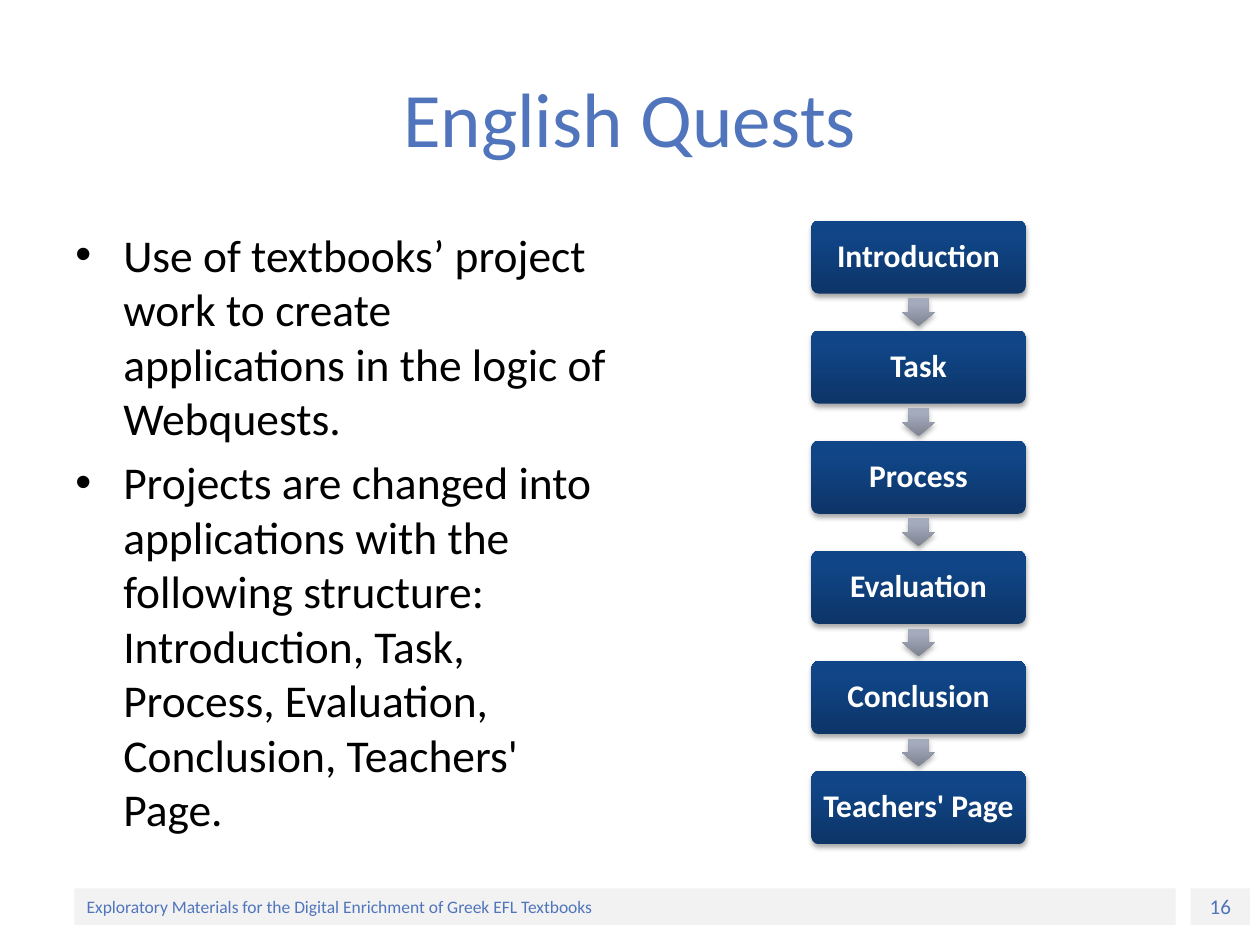
from lxml.etree import SubElement
from pptx import Presentation
from pptx.dml.color import RGBColor
from pptx.enum.shapes import MSO_SHAPE
from pptx.enum.text import MSO_ANCHOR, PP_ALIGN
from pptx.oxml import parse_xml
from pptx.oxml.ns import nsdecls, qn
from pptx.util import Inches, Pt

# Content
TITLE = "English Quests"
BULLETS = [
    "Use of textbooks’ project work to create applications in the logic of Webquests.",
    "Projects are changed into applications with the following structure: "
    "Introduction, Task, Process, Evaluation, Conclusion, Teachers' Page.",
]
STEPS = ["Introduction", "Task", "Process", "Evaluation", "Conclusion", "Teachers' Page"]
FOOTER = "Exploratory Materials for the Digital Enrichment of Greek EFL Textbooks"
PAGE_NUMBER = "16"

# Style
FONT = "Calibri"
BLUE = RGBColor(0x50, 0x75, 0xBC)
BLACK = RGBColor(0x00, 0x00, 0x00)
WHITE = RGBColor(0xFF, 0xFF, 0xFF)
PALE_GREY = RGBColor(0xF2, 0xF2, 0xF2)
# Gradient stops run from the bottom up: position in percent, colour
NAVY_STOPS = [(0, RGBColor(0x0D, 0x35, 0x68)), (80, RGBColor(0x10, 0x45, 0x87)),
              (100, RGBColor(0x0E, 0x45, 0x8A))]
GREY_STOPS = [(0, RGBColor(0x7E, 0x83, 0x91)), (80, RGBColor(0xA4, 0xAB, 0xBC)),
              (100, RGBColor(0xA4, 0xAB, 0xBE))]

# Flow geometry, in inches
FLOW_LEFT, FLOW_TOP, FLOW_BOTTOM = 6.44, 1.75, 6.70
STEP_WIDTH, STEP_HEIGHT = 1.70, 0.58
ARROW_LENGTH, ARROW_WIDTH = 0.22, 0.26


def format_text(paragraph, size, color, bold=False, align=PP_ALIGN.LEFT):
    paragraph.alignment = align
    for span in paragraph.runs:
        span.font.name = FONT
        span.font.size = Pt(size)
        span.font.bold = bold
        span.font.color.rgb = color


def set_insets(frame, horizontal, vertical):
    frame.margin_left = frame.margin_right = Inches(horizontal)
    frame.margin_top = frame.margin_bottom = Inches(vertical)


def add_plain_shape(slide, kind, left, top, width, height):
    shape = slide.shapes.add_shape(
        kind, Inches(left), Inches(top), Inches(width), Inches(height))
    shape.shadow.inherit = False
    shape.line.fill.background()
    return shape


def add_raised_shape(slide, kind, left, top, width, height, stops):
    """Add a shape with a vertical gradient and a soft shadow below it."""
    shape = add_plain_shape(slide, kind, left, top, width, height)
    stop_xml = "".join(
        f'<a:gs pos="{position * 1000}"><a:srgbClr val="{color}"/></a:gs>'
        for position, color in stops)
    gradient = parse_xml(
        f'<a:gradFill {nsdecls("a")} rotWithShape="0"><a:gsLst>{stop_xml}</a:gsLst>'
        '<a:lin ang="16200000" scaled="0"/></a:gradFill>')
    properties = shape._element.spPr
    properties.find(qn("a:prstGeom")).addnext(gradient)
    shadow = SubElement(
        properties.find(qn("a:effectLst")), qn("a:outerShdw"), blurRad=str(Pt(3.1)),
        dist=str(Pt(1.8)), dir="5400000", rotWithShape="0")
    color = SubElement(shadow, qn("a:srgbClr"), val="000000")
    SubElement(color, qn("a:alpha"), val="35000")
    return shape


def add_footer_bar(slide, left, width, text, size, align):
    bar = add_plain_shape(slide, MSO_SHAPE.RECTANGLE, left, 7.05, width, 0.29)
    bar.fill.solid()
    bar.fill.fore_color.rgb = PALE_GREY
    frame = bar.text_frame
    set_insets(frame, 0.1, 0.03)
    frame.vertical_anchor = MSO_ANCHOR.MIDDLE
    frame.text = text
    format_text(frame.paragraphs[0], size, BLUE, align=align)


def add_bullets(slide):
    box = slide.shapes.add_textbox(Inches(0.5), Inches(1.75), Inches(4.42), Inches(4.95))
    frame = box.text_frame
    frame.word_wrap = True
    for index, text in enumerate(BULLETS):
        para = frame.add_paragraph() if index else frame.paragraphs[0]
        para.text = text
        para.space_before = Pt(5.2)
        format_text(para, 26, BLACK)
        properties = para._p.get_or_add_pPr()
        properties.set("marL", str(Inches(0.38)))
        properties.set("indent", str(Inches(-0.38)))
        SubElement(properties, qn("a:buFont"), typeface="Arial")
        SubElement(properties, qn("a:buChar"), char="•")


def add_flow(slide):
    pitch = (FLOW_BOTTOM - FLOW_TOP - STEP_HEIGHT) / (len(STEPS) - 1)
    arrow_left = FLOW_LEFT + (STEP_WIDTH - ARROW_LENGTH) / 2
    for index, label in enumerate(STEPS):
        top = FLOW_TOP + index * pitch
        if index:
            arrow_top = top - (pitch - STEP_HEIGHT + ARROW_WIDTH) / 2
            arrow = add_raised_shape(slide, MSO_SHAPE.RIGHT_ARROW, arrow_left, arrow_top,
                                     ARROW_LENGTH, ARROW_WIDTH, GREY_STOPS)
            arrow.adjustments[0], arrow.adjustments[1] = 0.6, 0.5
            arrow.rotation = 90
        step = add_raised_shape(slide, MSO_SHAPE.ROUNDED_RECTANGLE, FLOW_LEFT, top,
                                STEP_WIDTH, STEP_HEIGHT, NAVY_STOPS)
        step.adjustments[0] = 0.1
        frame = step.text_frame
        set_insets(frame, 0.07, 0.07)
        frame.vertical_anchor = MSO_ANCHOR.MIDDLE
        frame.text = label
        frame.paragraphs[0].line_spacing = 0.9
        format_text(frame.paragraphs[0], 18, WHITE, bold=True, align=PP_ALIGN.CENTER)


def main():
    deck = Presentation()
    deck.slide_width, deck.slide_height = Inches(10), Inches(7.5)
    slide = deck.slides.add_slide(deck.slide_layouts[5])

    # Title
    title = slide.shapes.title
    title.left, title.top = Inches(0.5), Inches(0.3)
    title.width, title.height = Inches(9), Inches(1.25)
    title.text_frame.text = TITLE
    title.text_frame.vertical_anchor = MSO_ANCHOR.MIDDLE
    format_text(title.text_frame.paragraphs[0], 44, BLUE, align=PP_ALIGN.CENTER)

    # Body, flow and footer
    add_bullets(slide)
    add_flow(slide)
    add_footer_bar(slide, 9.45, 0.47, PAGE_NUMBER, 12, PP_ALIGN.CENTER)
    add_footer_bar(slide, 0.59, 8.74, FOOTER, 10, PP_ALIGN.LEFT)

    deck.save("out.pptx")


if __name__ == "__main__":
    main()
